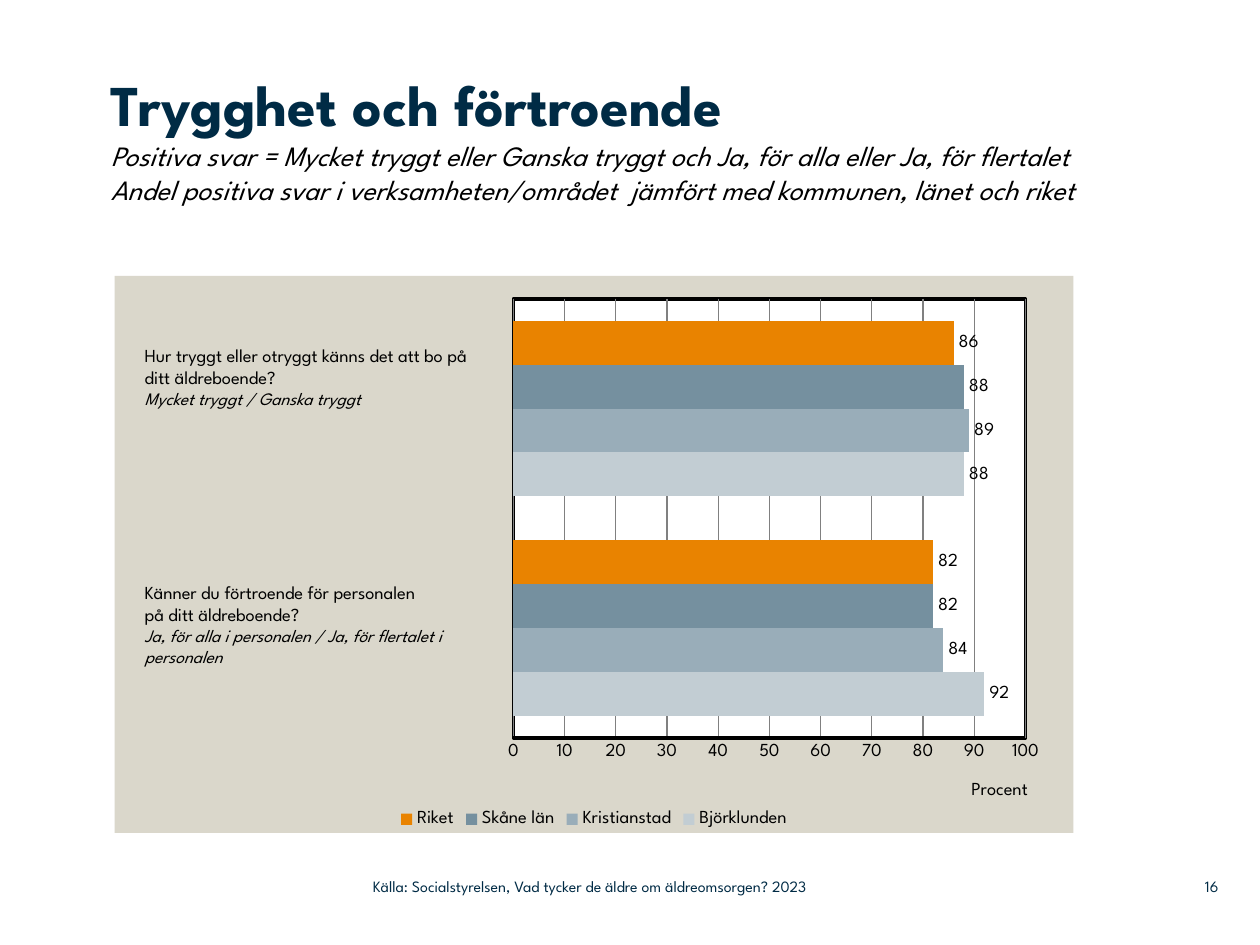
import pptx
import pptx.chart.data
import pptx.dml.color
import pptx.enum.chart
import pptx.enum.text
import pptx.oxml
import pptx.oxml.ns
import pptx.util

Inches, Pt = pptx.util.Inches, pptx.util.Pt
RGBColor = pptx.dml.color.RGBColor
qn = pptx.oxml.ns.qn

FONT = "League Spartan"
NAVY = RGBColor(0x00, 0x2B, 0x45)
BLACK = RGBColor(0x00, 0x00, 0x00)
GRAY = RGBColor(0x80, 0x80, 0x80)
PANEL = "DAD7CB"
WHITE = "FFFFFF"

HEADING = [
    ("Trygghet och förtroende", dict(size=33, bold=True, color=NAVY)),
    ("Positiva svar = Mycket tryggt eller Ganska tryggt och Ja, för alla eller Ja, för flertalet",
     dict(size=16, italic=True)),
    ("Andel positiva svar i verksamheten/området  jämfört med kommunen, länet och riket",
     dict(size=16, italic=True)),
]
ANSWER = dict(size=10, italic=True)
QUESTIONS = [
    ((1.05, 2.68, 2.98, 0.81), [
        ("Hur tryggt eller otryggt känns det att bo på ditt äldreboende?", {}),
        ("Mycket tryggt / Ganska tryggt", ANSWER),
    ]),
    ((1.05, 4.56, 3, 0.98), [
        ("Känner du förtroende för personalen", {}),
        ("på ditt äldreboende?", {}),
        ("Ja, för alla i personalen / Ja, för flertalet i personalen", ANSWER),
    ]),
]
SOURCE = "Källa: Socialstyrelsen, Vad tycker de äldre om äldreomsorgen? 2023"
PAGE_NUMBER = "16"

CATEGORIES = ["1", "2"]
SERIES = [
    ("Björklunden", (92, 88), RGBColor(0xC2, 0xCD, 0xD3)),
    ("Kristianstad", (84, 89), RGBColor(0x99, 0xAD, 0xB9)),
    ("Skåne län", (82, 88), RGBColor(0x75, 0x90, 0x9F)),
    ("Riket", (82, 86), RGBColor(0xE9, 0x83, 0x00)),
]


def style_font(font, size=10.5, color=BLACK, bold=False, italic=False):
    font.name = FONT
    font.size = Pt(size)
    font.color.rgb = color
    font.bold = bold
    font.italic = italic


def add_text(page, place, lines, inset=True, align=None,
             anchor=pptx.enum.text.MSO_ANCHOR.TOP):
    """Add a box with one paragraph for each (text, font format) line."""
    box = page.shapes.add_textbox(*map(Inches, place))
    frame = box.text_frame
    frame.word_wrap = True
    frame.vertical_anchor = anchor
    if not inset:
        frame.margin_left = frame.margin_right = 0
        frame.margin_top = frame.margin_bottom = 0
    for index, (text, style) in enumerate(lines):
        para = frame.add_paragraph() if index else frame.paragraphs[0]
        para.alignment = align
        span = para.add_run()
        span.text = text
        style_font(span.font, **style)


def chart_part(xml):
    return pptx.oxml.parse_xml(xml.replace(
        ">", " %s>" % pptx.oxml.ns.nsdecls("c", "a"), 1))


def area_format(fill, line):
    return chart_part(
        '<c:spPr><a:solidFill><a:srgbClr val="%s"/></a:solidFill>%s</c:spPr>' % (fill, line))


def set_layout(parent, index, target="", **numbers):
    """Put a manual layout, in fractions of the chart, at a child index."""
    for old in parent.findall(qn("c:layout")):
        parent.remove(old)
    inner = '<c:layoutTarget val="%s"/>' % target if target else ""
    inner += "".join('<c:%sMode val="edge"/>' % key for key in "xy")
    inner += "".join('<c:%s val="%s"/>' % pair for pair in numbers.items())
    parent.insert(index, chart_part(
        "<c:layout><c:manualLayout>%s</c:manualLayout></c:layout>" % inner))


def add_bar_chart(page):
    data = pptx.chart.data.CategoryChartData()
    data.categories = CATEGORIES
    for name, values, _ in SERIES:
        data.add_series(name, values)
    chart = page.shapes.add_chart(
        pptx.enum.chart.XL_CHART_TYPE.BAR_CLUSTERED,
        *map(Inches, (0.91, 2.19, 7.61, 4.42)), data).chart
    style_font(chart.font)
    chart.has_title = False
    chart.has_legend = True
    chart.legend.position = pptx.enum.chart.XL_LEGEND_POSITION.BOTTOM
    chart.legend.include_in_layout = False
    style_font(chart.legend.font)

    plot = chart.plots[0]
    plot.gap_width = 100
    plot.overlap = 0
    plot.vary_by_categories = False
    for series, (_, _, color) in zip(plot.series, SERIES):
        series.format.fill.solid()
        series.format.fill.fore_color.rgb = color
        labels = series.data_labels
        labels.show_value = True
        labels.position = pptx.enum.chart.XL_LABEL_POSITION.OUTSIDE_END
        style_font(labels.font)

    chart.category_axis.visible = False
    axis = chart.value_axis
    axis.minimum_scale, axis.maximum_scale, axis.major_unit = 0, 100, 10
    axis.major_tick_mark = pptx.enum.chart.XL_TICK_MARK.NONE
    axis.format.line.color.rgb = BLACK
    axis.format.line.width = Pt(2)
    axis.has_major_gridlines = True
    axis.major_gridlines.format.line.color.rgb = GRAY
    axis.major_gridlines.format.line.width = Pt(0.75)
    style_font(axis.tick_labels.font)
    para = axis.axis_title.text_frame.paragraphs[0]
    span = para.add_run()
    span.text = "Procent"
    style_font(span.font)

    title = axis.axis_title._element
    set_layout(title, 1, x=0.89, y=0.9)
    space = chart._chartSpace
    plot_area = space.chart.plotArea
    set_layout(plot_area, 0, "inner", x=0.416, y=0.041, w=0.534, h=0.789)
    border = ('<a:ln w="25400"><a:solidFill><a:srgbClr val="000000"/>'
              '</a:solidFill></a:ln>')
    plot_area.append(area_format(WHITE, border))
    space.find(qn("c:txPr")).addprevious(
        area_format(PANEL, "<a:ln><a:noFill/></a:ln>"))


def main():
    deck = pptx.Presentation()
    deck.slide_width, deck.slide_height = Inches(10), Inches(7.5)
    page = deck.slides.add_slide(deck.slide_layouts[6])
    add_bar_chart(page)
    add_text(page, (0.88, 0.55, 7.75, 1.64), HEADING, inset=False)
    for place, lines in QUESTIONS:
        add_text(page, place, lines)
    footer = dict(size=9, color=NAVY)
    middle = pptx.enum.text.MSO_ANCHOR.MIDDLE
    add_text(page, (9.2, 6.89, 0.47, 0.29), [(PAGE_NUMBER, footer)], inset=False,
             align=pptx.enum.text.PP_ALIGN.RIGHT, anchor=middle)
    add_text(page, (2.96, 6.89, 4.43, 0.29), [(SOURCE, footer)], inset=False,
             anchor=middle)
    deck.save("out.pptx")


if __name__ == "__main__":
    main()
